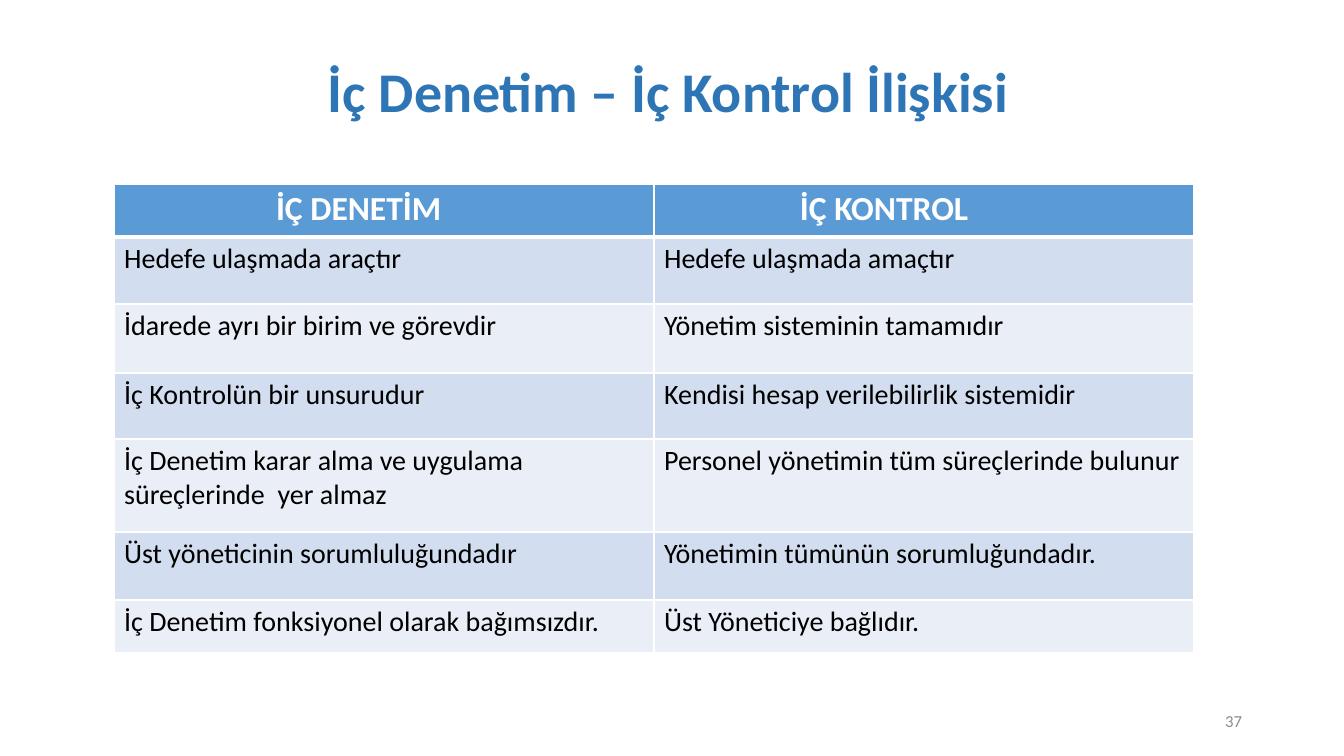
from lxml.etree import SubElement
from pptx import Presentation
from pptx.dml.color import RGBColor
from pptx.enum.text import MSO_ANCHOR as Anchor, PP_ALIGN as Align
from pptx.oxml.ns import qn
from pptx.util import Emu, Pt

EMU_PER_PX = 914400 / 100.8
COLORS = {
    "title": "2E75B6", "number": "8C8C8C", "header": "5B9BD5",
    "dark band": "D2DEEF", "light band": "EAEFF7", "white": "FFFFFF", "black": "000000",
}
ROWS = [
    ("İÇ DENETİM", "İÇ KONTROL"),
    ("Hedefe ulaşmada araçtır", "Hedefe ulaşmada amaçtır"),
    ("İdarede ayrı bir birim ve görevdir", "Yönetim sisteminin tamamıdır"),
    ("İç Kontrolün bir unsurudur", "Kendisi hesap verilebilirlik sistemidir"),
    ("İç Denetim karar alma ve uygulama süreçlerinde  yer almaz",
     "Personel yönetimin tüm süreçlerinde bulunur"),
    ("Üst yöneticinin sorumluluğundadır", "Yönetimin tümünün sorumluğundadır."),
    ("İç Denetim fonksiyonel olarak bağımsızdır.", "Üst Yöneticiye bağlıdır."),
]
ROW_HEIGHTS = [53, 67, 69, 66, 93, 68, 53]
COLUMN_WIDTH = 540
HEADER_INDENTS = [162, 146]


def px(length):
    return Emu(round(length * EMU_PER_PX))


def write(text_frame, text, size, color, bold=False, align=Align.LEFT):
    paragraph = text_frame.paragraphs[0]
    paragraph.alignment = align
    run = paragraph.add_run()
    run.text = text
    for name, value in {"name": "Calibri", "size": Pt(size), "bold": bold}.items():
        setattr(run.font, name, value)
    run.font.color.rgb = RGBColor.from_string(COLORS[color])
    return paragraph


presentation = Presentation()
presentation.slide_width, presentation.slide_height = px(1344), px(756)
slide = presentation.slides.add_slide(presentation.slide_layouts[5])

# Title
title = slide.shapes.title
for name, value in {"left": 0, "top": 21, "width": 1336, "height": 146}.items():
    setattr(title, name, px(value))
title.text_frame.vertical_anchor = Anchor.MIDDLE
heading = write(title.text_frame, "İç Denetim – İç Kontrol İlişkisi", 40, "title", True, Align.CENTER)
heading.line_spacing = 0.9

# Comparison table
table = slide.shapes.add_table(
    len(ROWS), 2, px(114), px(184), px(2 * COLUMN_WIDTH), px(sum(ROW_HEIGHTS))
).table
table.horz_banding = False
for column in table.columns:
    column.width = px(COLUMN_WIDTH)

for row_index, (texts, height) in enumerate(zip(ROWS, ROW_HEIGHTS)):
    table.rows[row_index].height = px(height)
    is_header = row_index == 0
    if is_header:
        fill, size, color = "header", 24, "white"
    else:
        fill, size, color = "dark band" if row_index % 2 else "light band", 20, "black"
    borders = {
        "a:lnL": 1, "a:lnR": 1,
        "a:lnT": 3 if row_index == 1 else 1,
        "a:lnB": 3 if is_header else 1,
    }
    for column_index, text in enumerate(texts):
        cell = table.cell(row_index, column_index)
        if is_header:
            cell.margin_left = px(HEADER_INDENTS[column_index])
        write(cell.text_frame, text, size, color, bold=is_header)
        properties = cell._tc.get_or_add_tcPr()
        for tag, width in borders.items():
            line = SubElement(properties, qn(tag), w=str(Pt(width)))
            line_fill = SubElement(line, qn("a:solidFill"))
            SubElement(line_fill, qn("a:srgbClr"), val=COLORS["white"])
        cell.fill.solid()
        cell.fill.fore_color.rgb = RGBColor.from_string(COLORS[fill])

# Slide number
number = slide.shapes.add_textbox(px(950), px(701), px(302), px(40)).text_frame
number.word_wrap = True
number.vertical_anchor = Anchor.MIDDLE
write(number, "37", 12, "number", align=Align.RIGHT)

presentation.save("out.pptx")
